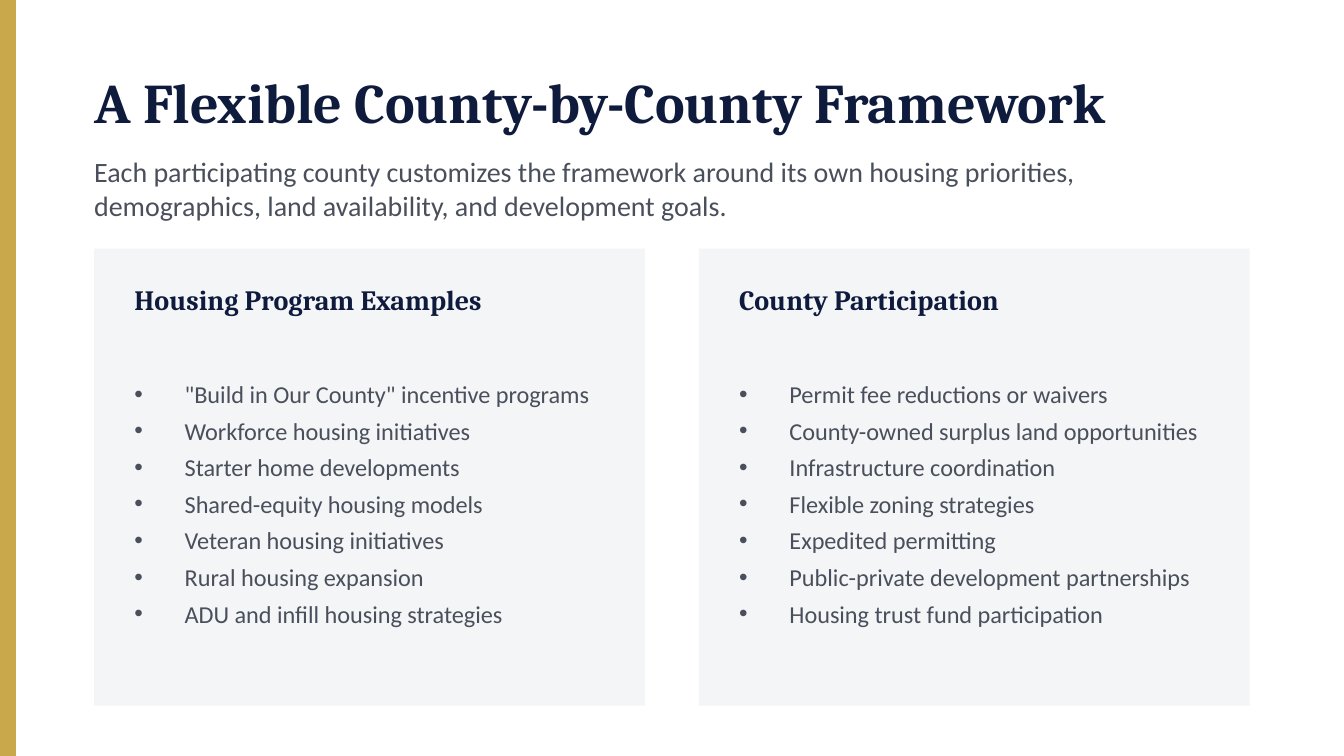
from lxml.etree import SubElement
from pptx import Presentation
from pptx.dml.color import RGBColor
from pptx.enum.shapes import MSO_SHAPE
from pptx.enum.text import MSO_ANCHOR, MSO_AUTO_SIZE, PP_ALIGN
from pptx.oxml.ns import qn
from pptx.util import Cm, Pt

NAVY, GREY, GOLD, PALE = "0F1B3D", "4A4F5C", "C9A84C", "F4F5F7"
BULLET_INDENT = Cm(0.95)


def add_rectangle(left, top, width, height, color):
    """Add a plain rectangle behind the placeholders."""
    shape = slide.shapes.add_shape(
        MSO_SHAPE.RECTANGLE, Cm(left), Cm(top), Cm(width), Cm(height))
    shape.shadow.inherit = False
    shape.fill.solid()
    shape.fill.fore_color.rgb = RGBColor.from_string(color)
    shape.line.fill.background()
    slide.shapes.title.element.addprevious(shape.element)


def write_text(shape, lines, left, top, width, height, *, size, color,
               font="Calibri", bold=False, bullet=None, space_after=0):
    shape.left, shape.top = Cm(left), Cm(top)
    shape.width, shape.height = Cm(width), Cm(height)
    frame = shape.text_frame
    frame.text = "\n".join(lines)
    frame.word_wrap = True
    frame.auto_size = MSO_AUTO_SIZE.NONE
    frame.vertical_anchor = MSO_ANCHOR.MIDDLE
    frame.margin_left = frame.margin_right = 0
    frame.margin_top = frame.margin_bottom = 0
    for paragraph in frame.paragraphs:
        if bullet:
            properties = paragraph._p.get_or_add_pPr()
            properties.set("marL", str(BULLET_INDENT))
            properties.set("indent", str(-BULLET_INDENT))
            SubElement(properties, qn("a:buChar"), char=bullet)
        paragraph.alignment = PP_ALIGN.LEFT
        paragraph.space_before = Pt(0)
        paragraph.space_after = Pt(space_after)
        paragraph.font.name = font
        paragraph.font.size = Pt(size)
        paragraph.font.bold = bold
        paragraph.font.color.rgb = RGBColor.from_string(color)


presentation = Presentation()
presentation.slide_width = Cm(25.4)
presentation.slide_height = Cm(14.29)
comparison_layout = presentation.slide_layouts.get_by_name("Comparison")
slide = presentation.slides.add_slide(comparison_layout)

add_rectangle(0, 0, 0.3, 14.29, GOLD)

margin = 1.78
write_text(slide.shapes.title, ["A Flexible County-by-County Framework"],
           margin, 1.02, 22.86, 1.78,
           size=30, color=NAVY, font="Cambria", bold=True)
subtitle = slide.shapes.add_textbox(0, 0, 0, 0)
write_text(subtitle, [
    "Each participating county customizes the framework around its own "
    "housing priorities, demographics, land availability, and development "
    "goals."], margin, 2.92, 21.59, 1.27, size=15, color=GREY)

cards = [
    ("Housing Program Examples", [
        '"Build in Our County" incentive programs',
        "Workforce housing initiatives",
        "Starter home developments",
        "Shared-equity housing models",
        "Veteran housing initiatives",
        "Rural housing expansion",
        "ADU and infill housing strategies",
    ]),
    ("County Participation", [
        "Permit fee reductions or waivers",
        "County-owned surplus land opportunities",
        "Infrastructure coordination",
        "Flexible zoning strategies",
        "Expedited permitting",
        "Public-private development partnerships",
        "Housing trust fund participation",
    ]),
]
card_width, card_gap, padding = 10.41, 1.02, 0.76
text_width = card_width - 2 * padding
headings_and_lists = list(slide.placeholders)[1:]

for index, (heading, items) in enumerate(cards):
    left = margin + index * (card_width + card_gap)
    heading_shape, list_shape = headings_and_lists[2 * index:2 * index + 2]
    add_rectangle(left, 4.7, card_width, 8.64, PALE)
    write_text(heading_shape, [heading], left + padding, 5.21, text_width, 0.89,
               size=15, color=NAVY, font="Cambria", bold=True)
    write_text(list_shape, items, left + padding, 6.22, text_width, 6.6,
               size=13, color=GREY, bullet="•", space_after=4)

presentation.save("out.pptx")
